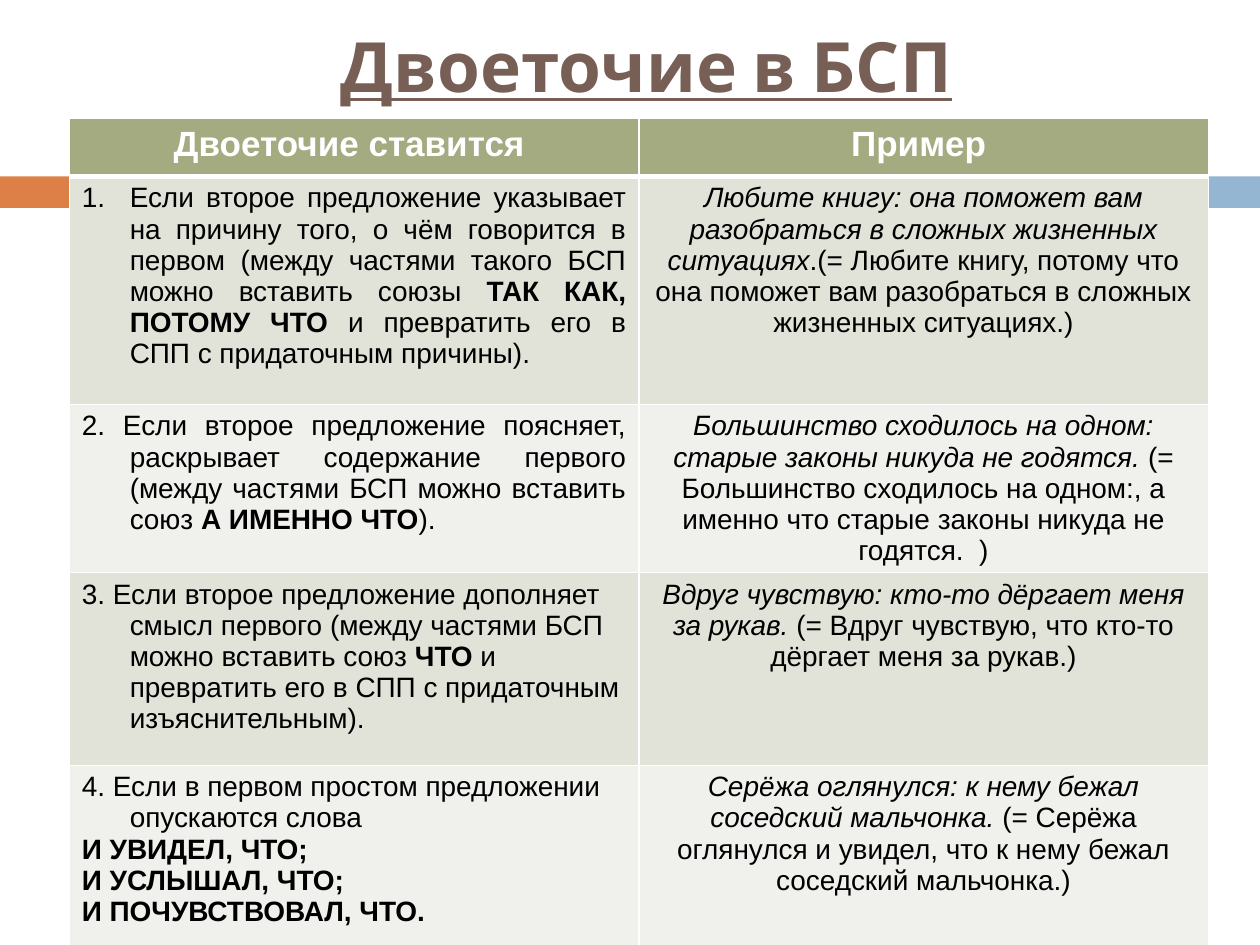
import pptx
import pptx.util
import pptx.dml.color
import pptx.enum.shapes
import pptx.enum.text
import pptx.oxml
import pptx.oxml.ns
from pptx.util import Inches

ALIGN = pptx.enum.text.PP_ALIGN
FONT = "Arial"
INDENT = Inches(0.38)
COLUMNS = [4.52, 4.52]
ROW_HEIGHTS = [0.46, 1.81, 1.24, 1.53, 1.53]
HEADERS = ["Двоеточие ставится ", "Пример "]
BANDS = ["E1E2D8", "F0F1ED"]

# Each rule: alignment, numbered, paragraphs of (text, style) runs, example runs
RULES = [
    (ALIGN.JUSTIFY, True,
     [[("Если второе предложение указывает на причину того, о чём говорится в первом "
        "(между частями такого БСП можно вставить союзы ", ""),
       ("ТАК КАК, ПОТОМУ ЧТО ", "b"),
       ("и превратить его в СПП с придаточным причины).", "")]],
     [("Любите книгу: она поможет вам разобраться в сложных жизненных ситуациях", "i"),
      (".(= Любите книгу, потому что она поможет вам разобраться в сложных "
       "жизненных ситуациях.)", "")]),
    (ALIGN.JUSTIFY, False,
     [[("2. Если второе предложение поясняет, раскрывает содержание первого "
        "(между частями БСП можно вставить союз ", ""),
       ("А ИМЕННО ЧТО", "b"), (").", "")]],
     [("Большинство сходилось на одном: старые законы никуда не годятся. ", "i"),
      ("(= Большинство сходилось на одном:, а именно что старые законы никуда "
       "не годятся.  )", "")]),
    (ALIGN.LEFT, False,
     [[("3. Если второе предложение дополняет смысл первого "
        "(между частями БСП можно вставить союз ", ""),
       ("ЧТО", "b"),
       (" и превратить его в СПП с придаточным изъяснительным).", "")]],
     [("Вдруг чувствую: кто-то дёргает меня за рукав. ", "i"),
      ("(= Вдруг чувствую, что кто-то дёргает меня за рукав.)", "")]),
    (ALIGN.LEFT, False,
     [[("4. Если в первом простом предложении опускаются слова", "")],
      [("И УВИДЕЛ, ЧТО;", "b")],
      [("И УСЛЫШАЛ, ЧТО;", "b")],
      [("И ПОЧУВСТВОВАЛ, ЧТО.", "b")]],
     [("Серёжа оглянулся: к нему бежал соседский мальчонка. ", "i"),
      ("(= Серёжа оглянулся и увидел, что к нему бежал соседский мальчонка.)", "")]),
]


def rgb(color):
    return pptx.dml.color.RGBColor.from_string(color)


def set_font(font, name, size, color):
    font.name, font.size = name, pptx.util.Pt(size)
    font.color.rgb = rgb(color)


def add_bar(s, left, top, width, height, color):
    bar = s.shapes.add_shape(pptx.enum.shapes.MSO_SHAPE.RECTANGLE,
                             Inches(left), Inches(top), Inches(width), Inches(height))
    bar.shadow.inherit = False
    bar.fill.solid()
    bar.fill.fore_color.rgb = rgb(color)
    bar.line.fill.background()


def set_title(s, left, top, width, height, text):
    title = s.shapes.title
    title.left, title.top = Inches(left), Inches(top)
    title.width, title.height = Inches(width), Inches(height)
    tf = title.text_frame
    tf.vertical_anchor = pptx.enum.text.MSO_ANCHOR.MIDDLE
    tf.text = text
    p = tf.paragraphs[0]
    p.alignment = ALIGN.CENTER
    set_font(p.font, "Cabin", 39.6, "775F55")
    p.font.bold = p.font.underline = True


def set_borders(cell, top=1, bottom=1):
    tcPr = cell._tc.get_or_add_tcPr()
    for i, (side, points) in enumerate([("L", 1), ("R", 1), ("T", top), ("B", bottom)]):
        tcPr.insert(i, pptx.oxml.parse_xml(
            f'<a:ln{side} {pptx.oxml.ns.nsdecls("a")} w="{pptx.util.Pt(points)}">'
            f'<a:solidFill><a:srgbClr val="FFFFFF"/></a:solidFill></a:ln{side}>'))


def set_indent(p, numbered):
    pPr = p._p.get_or_add_pPr()
    pPr.set("marL", str(INDENT))
    pPr.set("indent", str(-INDENT))
    if numbered:
        pPr.insert_element_before(pptx.oxml.parse_xml(
            f'<a:buAutoNum {pptx.oxml.ns.nsdecls("a")} type="arabicPeriod"/>'),
            "a:tabLst", "a:defRPr", "a:extLst")


def fill_cell(cell, paragraphs, align, fill, size=16, color="000000",
              hanging=False, numbered=False):
    cell.fill.solid()
    cell.fill.fore_color.rgb = rgb(fill)
    tf = cell.text_frame
    for i, runs in enumerate(paragraphs):
        p = tf.add_paragraph() if i else tf.paragraphs[0]
        p.alignment = align
        set_font(p.font, FONT, size, color)
        if hanging:
            set_indent(p, numbered)
        for text, style in runs:
            r = p.add_run()
            r.text = text
            set_font(r.font, FONT, size, color)
            r.font.bold, r.font.italic = style == "b", style == "i"


def add_rules_table(s, left, top, width, height):
    table = s.shapes.add_table(len(ROW_HEIGHTS), len(COLUMNS), Inches(left), Inches(top),
                               Inches(width), Inches(height)).table
    for column, w in zip(table.columns, COLUMNS):
        column.width = Inches(w)
    for row, h in zip(table.rows, ROW_HEIGHTS):
        row.height = Inches(h)

    # Header row
    for c, text in enumerate(HEADERS):
        fill_cell(table.cell(0, c), [[(text, "b")]], ALIGN.CENTER, "A5AB81", 20, "FFFFFF")
        set_borders(table.cell(0, c), bottom=3)

    # Rules on the left, examples on the right
    for n, (align, numbered, rule, example) in enumerate(RULES, 1):
        band = BANDS[(n - 1) % 2]
        fill_cell(table.cell(n, 0), rule, align, band, hanging=True, numbered=numbered)
        fill_cell(table.cell(n, 1), [example], ALIGN.CENTER, band)
        for c in range(len(COLUMNS)):
            set_borders(table.cell(n, c), top=3 if n == 1 else 1)


def main():
    prs = pptx.Presentation()
    prs.slide_width, prs.slide_height = Inches(10), Inches(7.5)
    s = prs.slides.add_slide(prs.slide_layouts[5])
    add_bar(s, 0, 1.4, 0.58, 0.25, "DD8047")
    add_bar(s, 0.65, 1.4, 9.35, 0.25, "94B6D2")
    set_title(s, 0.67, 0.25, 8.92, 0.53, "Двоеточие в БСП")
    add_rules_table(s, 0.55, 0.94, sum(COLUMNS), sum(ROW_HEIGHTS))
    prs.save("out.pptx")


if __name__ == "__main__":
    main()
